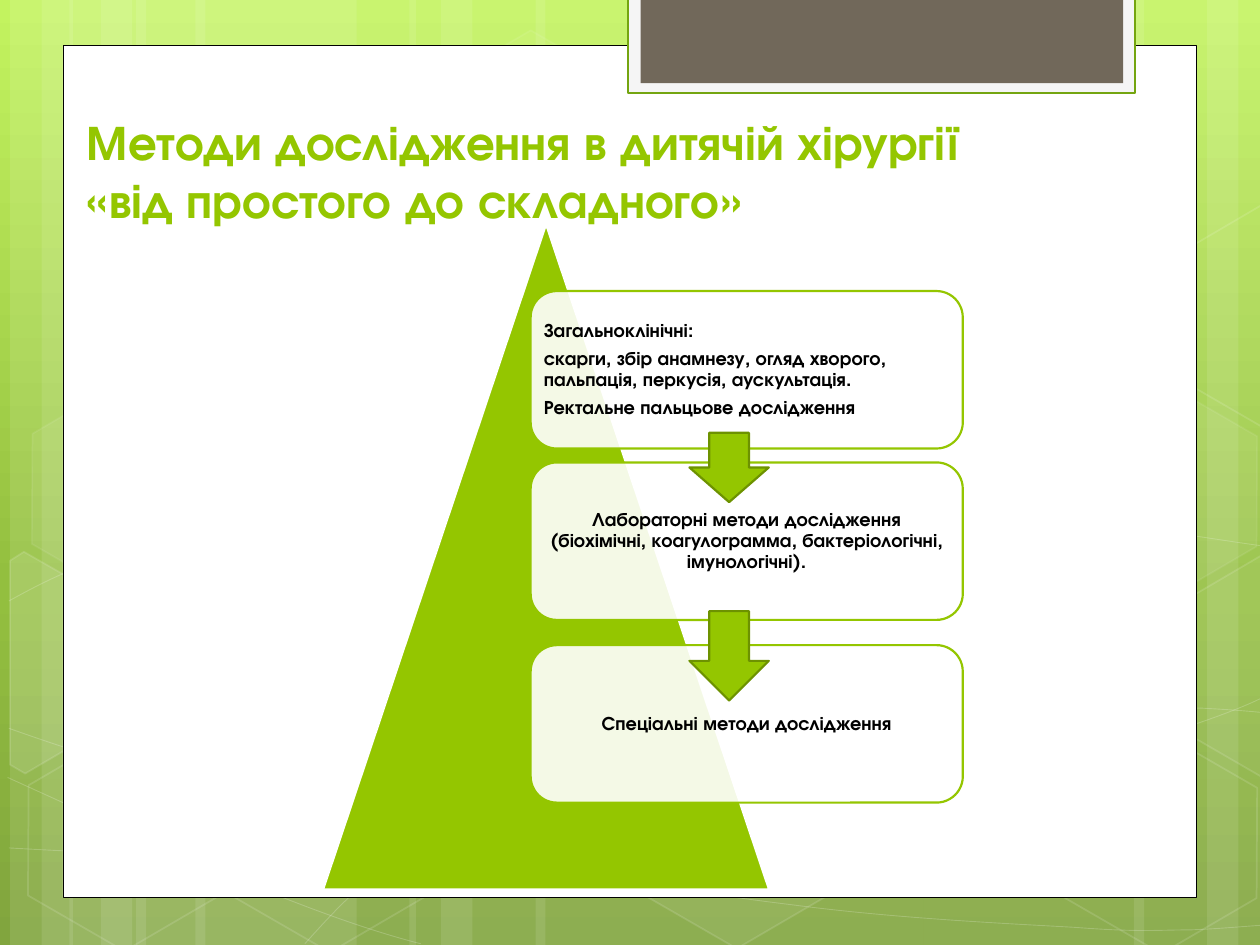
"""Builds the slide on research methods in paediatric surgery, on a 100 by 75 grid."""
import lxml.etree
import pptx
import pptx.dml.color
import pptx.enum.shapes
import pptx.enum.text
import pptx.oxml.ns
import pptx.util

RGBColor = pptx.dml.color.RGBColor
PRESET = pptx.enum.shapes.MSO_SHAPE
ALIGN = pptx.enum.text.PP_ALIGN
ANCHOR = pptx.enum.text.MSO_ANCHOR
qn = pptx.oxml.ns.qn

CELL = pptx.util.Inches(0.1)
FONT = "TeX Gyre Adventor"
WHITE = RGBColor(0xFF, 0xFF, 0xFF)
BLACK = RGBColor(0x00, 0x00, 0x00)
LIME = RGBColor(0x94, 0xC6, 0x00)
DARK_LIME = RGBColor(0x6D, 0x92, 0x00)
FRAME_LIME = RGBColor(0x74, 0xA5, 0x10)
PALE = RGBColor(0xF5, 0xF5, 0xF5)
TAUPE = RGBColor(0x71, 0x68, 0x5A)
SKY = [
    (0, RGBColor(0xC3, 0xF3, 0x5F)),
    (62, RGBColor(0x93, 0xBF, 0x3F)),
    (100, RGBColor(0x81, 0xA5, 0x3E)),
]

STRIPS = {
    17.5: [10.8, 15.5, 73.3],
    5: [0.8, 5.5, 95.8, 32.5],
    8.3: [3.3, 8, 90, 35],
    30.8: [42.5],
}
CURVES = [
    [(0.7, 67.3), (6.1, 67.6), (11.5, 67.9), (19, 67.8), (26.5, 67.7), (35.8, 67.5),
     (45.8, 66.5), (55.8, 65.5), (70, 63.6), (79.2, 61.7), (88.3, 59.8), (97.7, 56.8),
     (100.7, 55.1)],
    [(0.7, 47.7), (3.6, 46.1), (6.5, 44.6), (12.1, 43.1), (17.8, 41.6), (25.9, 39.4),
     (34.7, 38.7), (43.6, 38), (54.4, 37.9), (65.4, 38.7), (76.4, 39.5), (94.7, 42.6),
     (100.7, 43.4)],
    [(0.6, 61.7), (12.7, 67.2), (24.7, 72.7), (33.4, 74.9)],
    [(0.7, 57.8), (3.8, 58.9), (7, 60), (12.8, 61.6), (18.6, 63.1), (27.3, 65.6),
     (35.7, 67.3), (44, 69), (54.5, 70.8), (62.8, 71.8), (71.1, 72.9), (80, 73.3),
     (85.3, 73.6), (90.5, 74), (91.9, 73.8), (94.5, 73.8), (97.1, 73.7), (98.9, 73.5),
     (100.7, 73.4)],
    [(24.2, 74.9), (26, 72.9), (27.8, 70.9), (30.2, 69.1), (32.6, 67.3), (36, 65.3),
     (38.8, 63.9), (41.6, 62.5), (43.3, 61.9), (47, 60.9), (50.6, 59.9), (57.3, 58.5),
     (60.8, 57.8), (64.4, 57.1), (64.9, 57.1), (68, 56.9), (71.1, 56.6), (76, 56.3),
     (79.4, 56.2), (82.9, 56.1), (88.6, 56.2), (88.6, 56.2), (88.6, 56.2), (95.3, 56.2),
     (95.3, 56.2), (97.1, 56.3), (98.8, 56.4), (100.6, 56.6)],
]
HEXAGONS = [
    (33.4, 3.6, 4, 8), (49.7, 58.9, 6, 12), (1.1, 59.1, 0, 12), (1.4, 31.2, 7, 8),
    (17.4, 59.2, 0, 12), (75.3, 45.3, 10, 12), (83.4, 59.3, 0, 12), (83.4, 31.4, 7, 8),
]
CUT_HEXAGONS = [
    ([(0.8, 44.5), (1.9, 43.8), (9.6, 48.2), (9.5, 57), (2, 61.4), (0.8, 60.7)], 10),
    ([(92.6, 48.5), (100.1, 44.1), (100.9, 44.6), (100.9, 61.3), (100.2, 61.7),
      (92.6, 57.3)], 4),
    ([(92.6, 20.7), (100.1, 16.3), (101, 16.8), (100.9, 33.5), (100.2, 33.9),
      (92.6, 29.5)], 0),
]
CARDS = [
    (23.1, ALIGN.LEFT, ["Загальноклінічні:",
                        "скарги, збір анамнезу, огляд хворого, пальпація, перкусія, аускультація.",
                        "Ректальне пальцьове дослідження"]),
    (36.7, ALIGN.CENTER, ["Лабораторні методи дослідження (біохімічні, коагулограмма, "
                          "бактеріологічні, імунологічні)."]),
    (51.2, ALIGN.CENTER, ["Спеціальні методи дослідження"]),
]
ARROWS = [(34.35, 5.5), (48.5, 7.1)]


def cells(*numbers):
    """Turns grid cells into slide lengths."""
    return [round(number * CELL) for number in numbers]


def set_opacity(parent, percent):
    """Makes the solid fill below an element partly transparent."""
    color = parent.find(qn("a:solidFill"))[0]
    lxml.etree.SubElement(color, qn("a:alpha")).set("val", str(percent * 1000))


def paint(shape, fill=None, opacity=100, line=None, line_width=1.25, line_opacity=100):
    """Sets the fill and the outline of a shape and removes its shadow."""
    shape.shadow.inherit = False
    properties = shape.element.spPr
    if fill is None or opacity == 0:
        shape.fill.background()
    else:
        shape.fill.solid()
        shape.fill.fore_color.rgb = fill
        if opacity < 100:
            set_opacity(properties, opacity)
    if line is None:
        shape.line.fill.background()
    else:
        shape.line.color.rgb = line
        shape.line.width = pptx.util.Pt(line_width)
        if line_opacity < 100:
            set_opacity(properties.find(qn("a:ln")), line_opacity)


def add_preset(slide, preset, box, **style):
    """Adds a painted preset shape in a box given in grid cells."""
    shape = slide.shapes.add_shape(preset, *cells(*box))
    paint(shape, **style)
    return shape


def add_outline(slide, points, close, **style):
    """Adds a painted freeform through points given in grid cells."""
    start, *rest = [cells(*point) for point in points]
    builder = slide.shapes.build_freeform(*start)
    builder.add_line_segments(rest, close=close)
    shape = builder.convert_to_shape()
    paint(shape, **style)
    return shape


def bend(shape):
    """Joins every three line segments of a freeform into one cubic curve."""
    outline = next(shape.element.iter(qn("a:path")))
    segments = outline.findall(qn("a:lnTo"))
    for first in range(0, len(segments), 3):
        curve = lxml.etree.SubElement(outline, qn("a:cubicBezTo"))
        for segment in segments[first:first + 3]:
            curve.append(segment[0])
            outline.remove(segment)


def write(shape, paragraphs, size, color, align=ALIGN.LEFT, anchor=ANCHOR.MIDDLE,
          inset=0.5, bottom_inset=0.5, line_spacing=1.0, space_after=0):
    """Fills a shape with bold paragraphs in one format."""
    frame = shape.text_frame
    frame.word_wrap = True
    frame.auto_size = pptx.enum.text.MSO_AUTO_SIZE.NONE
    frame.vertical_anchor = anchor
    frame.margin_left, frame.margin_top, frame.margin_right, frame.margin_bottom = cells(
        inset, 0.5, inset, bottom_inset)
    frame.text = "\n".join(paragraphs)
    for paragraph in frame.paragraphs:
        paragraph.alignment = align
        paragraph.line_spacing = line_spacing
        paragraph.space_before = pptx.util.Pt(0)
        paragraph.space_after = pptx.util.Pt(space_after)
        for run in paragraph.runs:
            run.font.name, run.font.size, run.font.bold = FONT, pptx.util.Pt(size), True
            run.font.color.rgb = color


def add_background(slide):
    """Draws the gradient, the strips, the curves and the hexagons."""
    fill = slide.background.fill
    fill.gradient()
    fill.gradient_angle = 270
    stops = next(slide.element.iter(qn("a:gsLst")))
    stops[:] = []
    for position, color in SKY:
        stop = lxml.etree.SubElement(stops, qn("a:gs"), pos=str(position * 1000))
        lxml.etree.SubElement(stop, qn("a:srgbClr"), val=str(color))
    for width, lefts in STRIPS.items():
        for left in lefts:
            add_preset(slide, PRESET.RECTANGLE, (left, 0, width, 75), fill=WHITE, opacity=10)
    for controls in CURVES:
        bend(add_outline(slide, controls, False, line=WHITE, line_width=0.5, line_opacity=20))
    for left, top, opacity, line_opacity in HEXAGONS:
        hexagon = add_preset(slide, PRESET.HEXAGON, (left, top, 17.5, 15.2), fill=WHITE,
                             opacity=opacity, line=WHITE, line_width=1, line_opacity=line_opacity)
        hexagon.adjustments[0] = 0.285
        hexagon.rotation = 30
    for points, opacity in CUT_HEXAGONS:
        add_outline(slide, points, True, fill=WHITE, opacity=opacity,
                    line=WHITE, line_width=1, line_opacity=12)


def add_panel(slide):
    """Draws the white sheet and the tab at its top."""
    add_preset(slide, PRESET.RECTANGLE, (5, 3.6, 90, 67.65), fill=WHITE, line=BLACK, line_width=0.5)
    add_preset(slide, PRESET.RECTANGLE, (49.85, -0.2, 40.25, 7.6), fill=PALE, line=FRAME_LIME)
    add_preset(slide, PRESET.RECTANGLE, (50.85, -0.2, 38.3, 6.8), fill=TAUPE)


def add_title(slide):
    """Places the title in front of the sheet."""
    title = slide.shapes.title
    title.left, title.top, title.width, title.height = cells(5.9, 7.6, 87.4, 15.7)
    write(title, ["Методи дослідження в дитячій хірургії\v«від простого до складного»"],
          28, LIME, anchor=ANCHOR.BOTTOM, inset=1, bottom_inset=5.14)
    title.element.getparent().append(title.element)


def add_pyramid(slide):
    """Draws the pyramid with its cards and the arrows between them."""
    add_preset(slide, PRESET.ISOSCELES_TRIANGLE, (25.64, 17.8, 35.4, 52.8), fill=LIME, line=WHITE)
    for top, align, paragraphs in CARDS:
        card = add_preset(slide, PRESET.ROUNDED_RECTANGLE, (42.12, top, 34.3, 12.5),
                          fill=WHITE, opacity=90, line=LIME)
        write(card, paragraphs, 11, BLACK, align=align, inset=0.45,
              line_spacing=0.9, space_after=4)
    for top, height in ARROWS:
        add_preset(slide, PRESET.DOWN_ARROW, (54.72, top, 6.3, height), fill=LIME, line=DARK_LIME)


def main():
    """Builds and saves the presentation."""
    presentation = pptx.Presentation()
    presentation.slide_width, presentation.slide_height = cells(100, 75)
    slide = presentation.slides.add_slide(presentation.slide_layouts[5])
    add_background(slide)
    add_panel(slide)
    add_title(slide)
    add_pyramid(slide)
    presentation.save("out.pptx")


if __name__ == "__main__":
    main()
